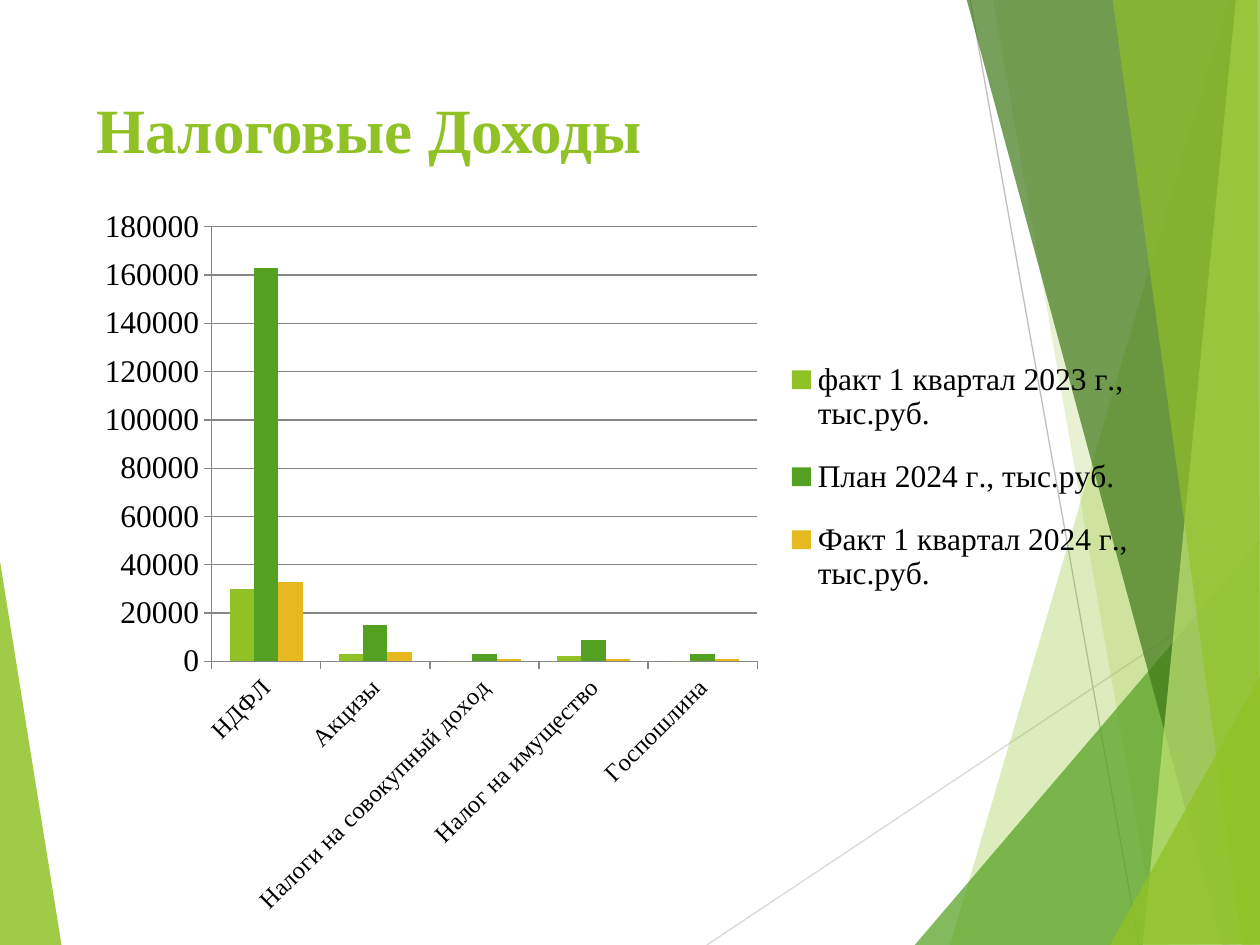
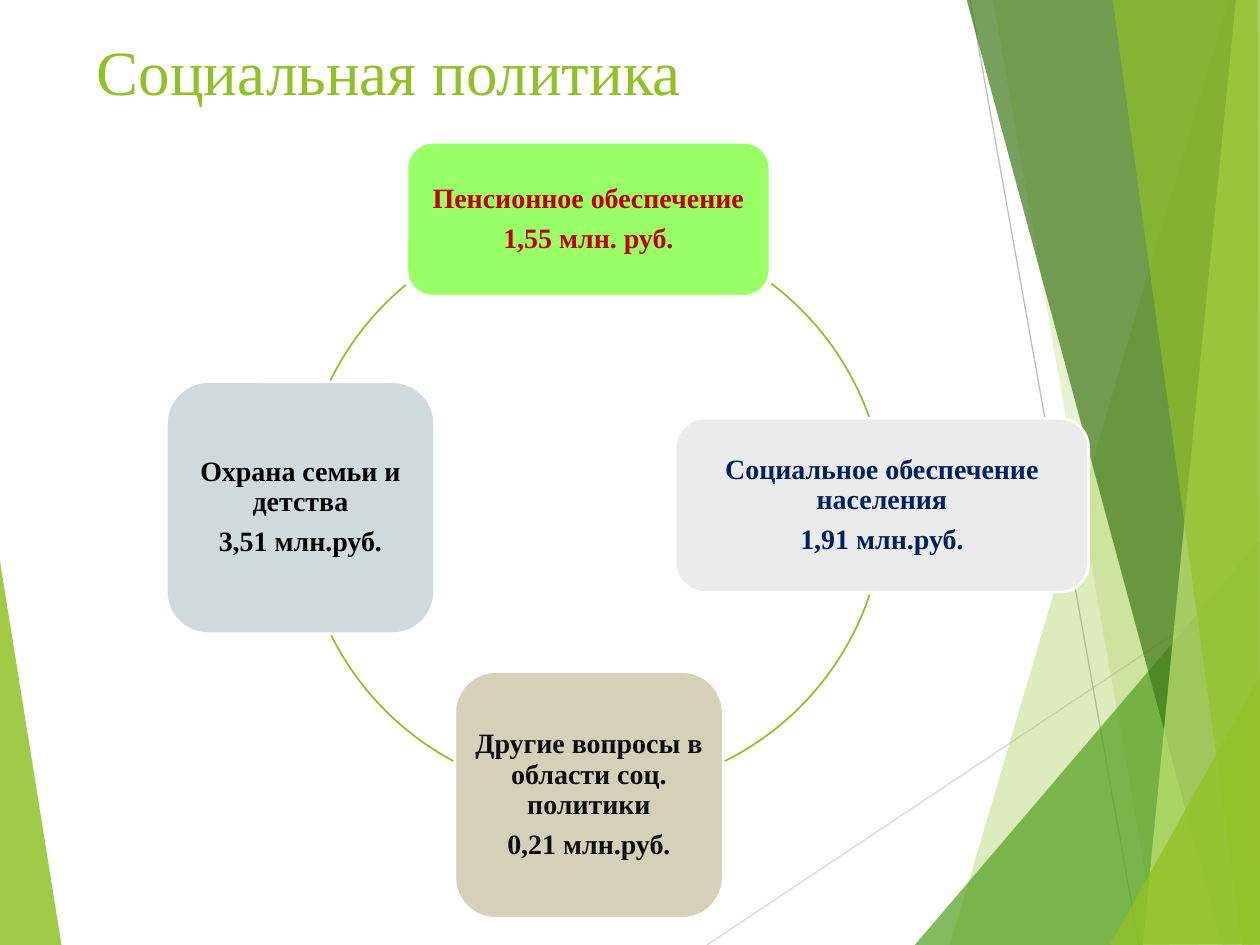
from typing import NamedTuple

from lxml.etree import SubElement
from pptx import Presentation
from pptx.chart.data import CategoryChartData
from pptx.dml.color import RGBColor
from pptx.enum.chart import XL_CHART_TYPE as ChartType
from pptx.enum.chart import XL_LEGEND_POSITION as LegendPosition
from pptx.enum.chart import XL_TICK_MARK as TickMark
from pptx.enum.shapes import MSO_CONNECTOR as Connector
from pptx.enum.shapes import MSO_SHAPE as ShapeType
from pptx.enum.text import MSO_ANCHOR as Anchor
from pptx.enum.text import PP_ALIGN as Align
from pptx.oxml import parse_xml
from pptx.oxml.ns import nsdecls, qn
from pptx.slide import Slide
from pptx.util import Inches, Pt

FONT = "Times New Roman"
COLORS = {
    "lime": "90C226", "green": "54A021", "forest": "3F7819", "pale lime": "C0E474",
    "gold": "E6B91E", "white": "FFFFFF", "black": "000000", "axis": "868686",
    "light line": "D9D9D9", "grey line": "BFBFBF",
    "neon": "99FF66", "red": "C00000", "silver": "EBEBEB", "navy": "002060",
    "sand": "D6D0B8", "ink": "0D0D0D", "mist": "CFDADF",
}


class Facet(NamedTuple):
    """Translucent background polygon; opacity in percent."""
    color: str
    opacity: int
    points: list[tuple[float, float]]


class Ray(NamedTuple):
    color: str
    start: tuple[float, float]
    end: tuple[float, float]


class Area(NamedTuple):
    left: float
    top: float
    width: float
    height: float


class Card(NamedTuple):
    area: Area
    fill: str
    text_color: str
    name: str
    amount: str


class Arc(NamedTuple):
    """Part of the ring, clockwise, angles in degrees from three o'clock."""
    left: float
    top: float
    start: float
    end: float


class Series(NamedTuple):
    name: str
    color: str
    values: list[int]


RAYS = [
    Ray("light line", (5.61, 7.5), (10.01, 4.57)),
    Ray("grey line", (7.7, 0), (9.04, 7.5)),
]
LEFT_FACET = Facet("lime", 85, [(-0.01, 4.39), (0.49, 7.51), (-0.01, 7.5)])
RIGHT_FACETS = [
    Facet("lime", 30, [(9.75, 0), (7.54, 7.5), (10.02, 7.51), (10.01, 0.01)]),
    Facet("lime", 20, [(7.88, -0.01), (9.19, 7.5), (10.01, 7.5), (10.01, -0.01)]),
    Facet("green", 72, [(7.26, 7.5), (10, 4.29), (10.01, 7.5)]),
    Facet("forest", 70, [(7.67, -0.01), (9.7, 7.5), (10.01, 7.49), (10.01, -0.01)]),
    Facet("pale lime", 70, [(9.81, -0.01), (9.07, 7.5), (10.01, 7.5), (10, -0.01)]),
    Facet("lime", 65, [(8.83, -0.01), (9.86, 7.5), (10, 7.5), (9.98, -0.01)]),
    Facet("lime", 80, [(8.81, 7.5), (10.01, 5.35), (10.01, 7.49)]),
]

CHART_AREA = Area(0.67, 1.55, 8.43, 5.83)
PLOT_AREA = Area(1.68, 1.8, 4.33, 3.45)
LEGEND_AREA = Area(6.17, 2.65, 2.9, 2.27)
TAXES = ["НДФЛ", "Акцизы", "Налоги на совокупный доход", "Налог на имущество", "Госпошлина"]
TAX_SERIES = [
    Series("факт 1 квартал 2023 г., тыс.руб.", "lime", [30000, 3000, 0, 2000, 0]),
    Series("План 2024 г., тыс.руб.", "green", [163000, 15000, 3000, 9000, 3000]),
    Series("Факт 1 квартал 2024 г., тыс.руб.", "gold", [33000, 4000, 1000, 1000, 1000]),
]

RING_DIAMETER = 4.57
CARDS = [
    Card(Area(3.23, 1.13, 2.88, 1.22), "neon", "red",
         "Пенсионное обеспечение", "1,55 млн. руб."),
    Card(Area(5.36, 3.32, 3.28, 1.38), "silver", "navy",
         "Социальное обеспечение населения", "1,91 млн.руб."),
    Card(Area(3.61, 5.33, 2.13, 1.96), "sand", "ink",
         "Другие вопросы в области соц. политики", "0,21 млн.руб."),
    Card(Area(1.32, 3.03, 2.13, 2), "mist", "black",
         "Охрана семьи и детства", "3,51 млн.руб."),
]
ARCS = [
    Arc(2.46, 1.79, 307.1, 340.4),
    Arc(2.45, 1.71, 18.5, 63.6),
    Arc(2.39, 1.74, 118.1, 153.6),
    Arc(2.39, 1.74, 206.1, 230.5),
]


def rgb(name: str) -> RGBColor:
    return RGBColor.from_string(COLORS[name])


def style_font(font, size: float, color: str, bold: bool = False) -> None:
    font.name = FONT
    font.size = Pt(size)
    font.bold = bold
    font.color.rgb = rgb(color)


def draw_facet(slide: Slide, facet: Facet) -> None:
    points = [(Inches(x), Inches(y)) for x, y in facet.points]
    builder = slide.shapes.build_freeform(*points[0])
    builder.add_line_segments(points[1:], close=True)
    shape = builder.convert_to_shape()
    shape.shadow.inherit = False
    shape.line.fill.background()
    shape.fill.solid()
    shape.fill.fore_color.rgb = rgb(facet.color)
    color = shape.fill._xPr.find(f".//{qn('a:srgbClr')}")
    SubElement(color, qn("a:alpha")).set("val", str(facet.opacity * 1000))


def draw_ray(slide: Slide, ray: Ray) -> None:
    ends = [Inches(value) for value in ray.start + ray.end]
    connector = slide.shapes.add_connector(Connector.STRAIGHT, *ends)
    connector.line.color.rgb = rgb(ray.color)
    connector.line.width = Pt(0.75)
    SubElement(connector._element.spPr, qn("a:effectLst"))


def add_themed_slide(presentation, title: str, top: float, bold: bool = False) -> Slide:
    slide = presentation.slides.add_slide(presentation.slide_layouts[6])
    draw_facet(slide, LEFT_FACET)
    for ray in RAYS:
        draw_ray(slide, ray)
    for facet in RIGHT_FACETS:
        draw_facet(slide, facet)
    box = slide.shapes.add_textbox(Inches(0.67), Inches(top), Inches(6.94), Inches(1.44))
    box.text_frame.word_wrap = True
    run = box.text_frame.paragraphs[0].add_run()
    run.text = title
    style_font(run.font, 36, "lime", bold)
    return slide


def place_chart_part(part, area: Area, index: int, target: str = "") -> None:
    """Give a plot area or legend a fixed place on the slide."""
    for old in part.findall(qn("c:layout")):
        part.remove(old)
    x = (area.left - CHART_AREA.left) / CHART_AREA.width
    y = (area.top - CHART_AREA.top) / CHART_AREA.height
    width = area.width / CHART_AREA.width
    height = area.height / CHART_AREA.height
    part.insert(index, parse_xml(
        f'<c:layout {nsdecls("c")}><c:manualLayout>{target}'
        f'<c:xMode val="edge"/><c:yMode val="edge"/><c:x val="{x}"/><c:y val="{y}"/>'
        f'<c:w val="{width}"/><c:h val="{height}"/></c:manualLayout></c:layout>'))


def draw_tax_chart(slide: Slide) -> None:
    data = CategoryChartData()
    data.categories = TAXES
    for series in TAX_SERIES:
        data.add_series(series.name, series.values)
    chart = slide.shapes.add_chart(
        ChartType.COLUMN_CLUSTERED, *(Inches(value) for value in CHART_AREA), data).chart
    chart.has_title = False
    style_font(chart.font, 18, "black")
    place_chart_part(chart._chartSpace.chart.plotArea, PLOT_AREA, 0,
                     '<c:layoutTarget val="inner"/>')

    chart.has_legend = True
    chart.legend.position = LegendPosition.RIGHT
    chart.legend.include_in_layout = False
    style_font(chart.legend.font, 18, "black")
    place_chart_part(chart.legend._element, LEGEND_AREA, 1)

    plot = chart.plots[0]
    plot.gap_width = 150
    plot.overlap = 0
    plot.vary_by_categories = False
    for drawn, series in zip(plot.series, TAX_SERIES):
        drawn.format.fill.solid()
        drawn.format.fill.fore_color.rgb = rgb(series.color)

    for axis, size in ((chart.category_axis, 14), (chart.value_axis, 18)):
        style_font(axis.tick_labels.font, size, "black")
        axis.major_tick_mark = TickMark.OUTSIDE
        axis.format.line.color.rgb = rgb("axis")
    chart.category_axis._element.txPr.find(qn("a:bodyPr")).set("rot", "-2700000")
    value_axis = chart.value_axis
    value_axis.minimum_scale, value_axis.maximum_scale = 0, 180000
    value_axis.major_unit = 20000
    value_axis.has_major_gridlines = True
    value_axis.major_gridlines.format.line.color.rgb = rgb("axis")


def draw_card(slide: Slide, card: Card) -> None:
    shape = slide.shapes.add_shape(
        ShapeType.ROUNDED_RECTANGLE, *(Inches(value) for value in card.area))
    shape.shadow.inherit = False
    shape.fill.solid()
    shape.fill.fore_color.rgb = rgb(card.fill)
    shape.line.color.rgb = rgb("white")
    shape.line.width = Pt(1.5)
    frame = shape.text_frame
    frame.word_wrap = True
    frame.vertical_anchor = Anchor.MIDDLE
    frame.margin_left = frame.margin_right = Inches(0.06)
    frame.margin_top = frame.margin_bottom = Inches(0.07)
    for paragraph, text in ((frame.paragraphs[0], card.name),
                            (frame.add_paragraph(), card.amount)):
        paragraph.alignment = Align.CENTER
        paragraph.line_spacing = 0.9
        paragraph.space_after = Pt(5.6)
        run = paragraph.add_run()
        run.text = text
        style_font(run.font, 16, card.text_color, bold=True)


def draw_arc(slide: Slide, arc: Arc) -> None:
    diameter = Inches(RING_DIAMETER)
    shape = slide.shapes.add_shape(
        ShapeType.ARC, Inches(arc.left), Inches(arc.top), diameter, diameter)
    shape.shadow.inherit = False
    shape.fill.background()
    shape.line.color.rgb = rgb("lime")
    shape.line.width = Pt(1)
    # Adjustments count in 100000ths, angles in 60000ths of a degree.
    for index, angle in enumerate((arc.start, arc.end)):
        shape.adjustments[index] = angle * 0.6


def main() -> None:
    presentation = Presentation()
    presentation.slide_width, presentation.slide_height = Inches(10), Inches(7.5)

    draw_tax_chart(add_themed_slide(presentation, "Налоговые Доходы", 0.67, bold=True))

    social_slide = add_themed_slide(presentation, "Социальная политика", 0.21)
    for card, arc in zip(CARDS, ARCS):
        draw_card(social_slide, card)
        draw_arc(social_slide, arc)

    presentation.save("out.pptx")


if __name__ == "__main__":
    main()
